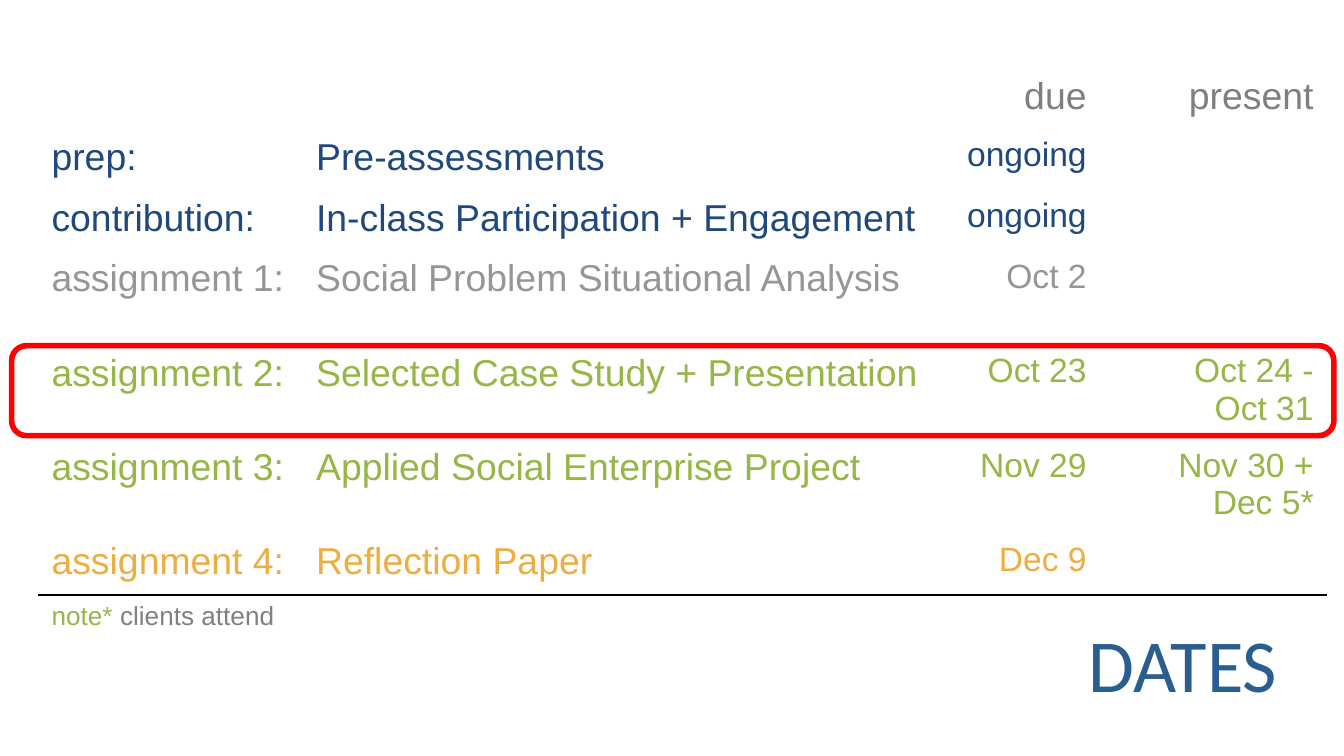
from lxml.etree import SubElement
from pptx import Presentation
from pptx.dml.color import RGBColor
from pptx.enum.shapes import MSO_SHAPE
from pptx.enum.text import MSO_ANCHOR, MSO_AUTO_SIZE, PP_ALIGN
from pptx.oxml.ns import qn
from pptx.util import Cm, Pt

GRAY = RGBColor(0x7F, 0x7F, 0x7F)
NOTE_GRAY = RGBColor(0x80, 0x80, 0x80)
NAVY = RGBColor(0x1F, 0x49, 0x7D)
DONE_GRAY = RGBColor(0x96, 0x96, 0x96)
GREEN = RGBColor(0x96, 0xB6, 0x46)
ORANGE = RGBColor(0xEC, 0xAD, 0x41)
TITLE_BLUE = RGBColor(0x2A, 0x5E, 0x8E)
RED = RGBColor(0xFF, 0x00, 0x00)

TITLE = "DATES"
HEADER = ("", "", "due", "present")
ITEMS = [
    (NAVY, 1.15, ("prep:", "Pre-assessments", "ongoing", "")),
    (NAVY, 1.15, ("contribution:", "In-class Participation + Engagement", "ongoing", "")),
    (DONE_GRAY, 1.78, ("assignment 1:", "Social Problem Situational Analysis", "Oct 2", "")),
    (GREEN, 1.78, ("assignment 2:", "Selected Case Study + Presentation", "Oct 23", "Oct 24 -\nOct 31")),
    (GREEN, 1.78, ("assignment 3:", "Applied Social Enterprise Project", "Nov 29", "Nov 30 +\nDec 5*")),
    (ORANGE, 1.15, ("assignment 4:", "Reflection Paper", "Dec 9", "")),
]
NOTE = [("note* ", GREEN), ("clients attend", NOTE_GRAY)]
COL_WIDTHS = (5.0, 11.89, 3.18, 4.29)
HEADER_HEIGHT, NOTE_HEIGHT = 1.15, 1.42
NO_STYLE_NO_GRID = "{2D5ABB26-0587-4C30-8999-92F81FD0307C}"


def style(r, size, color, font="Arial"):
    r.font.size = Pt(size)
    r.font.name = font
    r.font.color.rgb = color


def fill_row(table, row, texts, color, date_size):
    for col, text in enumerate(texts):
        if not text:
            continue
        tf = table.cell(row, col).text_frame
        tf.text = text
        is_date = col >= 2
        for p in tf.paragraphs:
            p.alignment = PP_ALIGN.RIGHT if is_date else PP_ALIGN.LEFT
            style(p.runs[0], date_size if is_date else 20, color)


def add_border(cell, side):
    tc_pr = cell._tc.get_or_add_tcPr()
    ln = SubElement(tc_pr, qn(f"a:{side}"), w=str(Pt(1)))
    fill = SubElement(ln, qn("a:solidFill"))
    SubElement(fill, qn("a:srgbClr"), val="000000")
    tc_pr.insert(0, ln)


prs = Presentation()
prs.slide_width, prs.slide_height = Cm(25.4), Cm(14.28)
s = prs.slides.add_slide(prs.slide_layouts[5])

heights = [HEADER_HEIGHT] + [height for _, height, _ in ITEMS] + [NOTE_HEIGHT]
table = s.shapes.add_table(
    len(heights), len(COL_WIDTHS), Cm(0.72), Cm(1.3), Cm(sum(COL_WIDTHS)), Cm(sum(heights))
).table
table._tbl.tblPr.find(qn("a:tableStyleId")).text = NO_STYLE_NO_GRID
table.first_row = table.horz_banding = False
for column, width in zip(table.columns, COL_WIDTHS):
    column.width = Cm(width)
for row, height in zip(table.rows, heights):
    row.height = Cm(height)
    for cell in row.cells:
        cell.fill.background()

fill_row(table, 0, HEADER, GRAY, 20)
for i, (color, _, texts) in enumerate(ITEMS, start=1):
    fill_row(table, i, texts, color, 18)

note_row = len(heights) - 1
for col in range(len(COL_WIDTHS)):
    add_border(table.cell(note_row - 1, col), "lnB")
    add_border(table.cell(note_row, col), "lnT")
note_cell = table.cell(note_row, 0)
note_cell.merge(table.cell(note_row, 1))
p = note_cell.text_frame.paragraphs[0]
for text, color in NOTE:
    r = p.add_run()
    r.text = text
    style(r, 14, color)

title = s.shapes.title
title.left, title.top, title.width, title.height = Cm(9.58), Cm(11.53), Cm(14.81), Cm(1.96)
tf = title.text_frame
tf.text = TITLE
tf.auto_size = MSO_AUTO_SIZE.NONE
tf.vertical_anchor = MSO_ANCHOR.MIDDLE
p = tf.paragraphs[0]
p.alignment = PP_ALIGN.RIGHT
style(p.runs[0], 40, TITLE_BLUE, "Calibri")

highlight = s.shapes.add_shape(MSO_SHAPE.ROUNDED_RECTANGLE, Cm(0.22), Cm(6.53), Cm(24.99), Cm(1.7))
highlight.shadow.inherit = False
highlight.fill.background()
highlight.line.color.rgb = RED
highlight.line.width = Pt(3)

prs.save("out.pptx")
